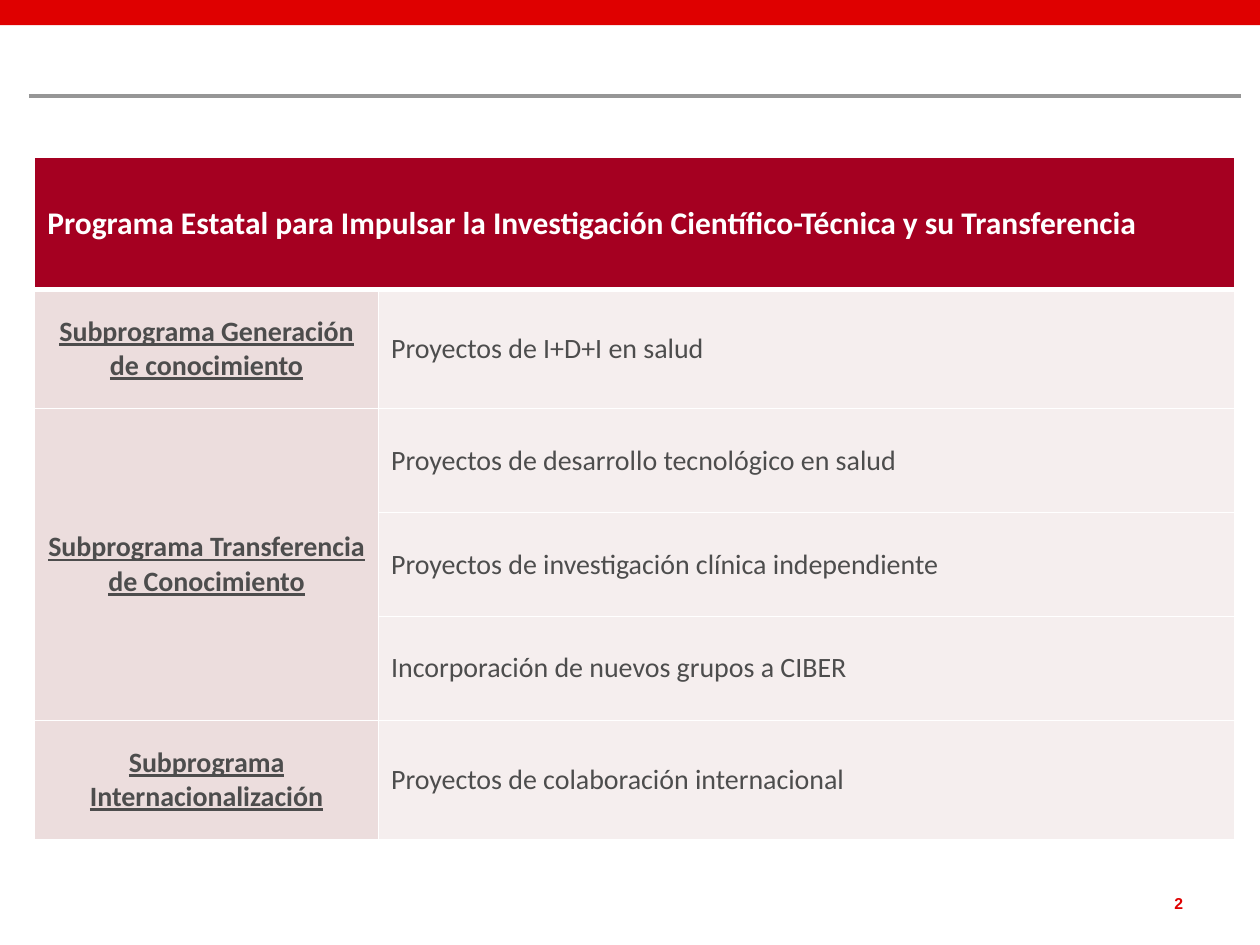
"""Build a slide with a table of research subprogrammes and their project lines."""
from lxml import etree
from pptx import Presentation
from pptx.dml.color import RGBColor
from pptx.enum.shapes import MSO_CONNECTOR, MSO_SHAPE
from pptx.enum.text import MSO_ANCHOR, PP_ALIGN
from pptx.oxml.ns import qn
from pptx.util import Pt

RECT = MSO_SHAPE.RECTANGLE
STRAIGHT = MSO_CONNECTOR.STRAIGHT
MIDDLE = MSO_ANCHOR.MIDDLE
LEFT, CENTER, RIGHT = PP_ALIGN.LEFT, PP_ALIGN.CENTER, PP_ALIGN.RIGHT

RED = RGBColor(0xDF, 0x00, 0x00)
GRAY = RGBColor(0x96, 0x96, 0x96)
WHITE = RGBColor(0xFF, 0xFF, 0xFF)
CRIMSON = RGBColor(0xA5, 0x00, 0x21)
ROSE = RGBColor(0xEC, 0xDD, 0xDD)
PALE = RGBColor(0xF5, 0xEE, 0xEE)
DARK = RGBColor(0x4D, 0x4D, 0x4D)

HEADING = "Programa Estatal para Impulsar la Investigación Científico-Técnica y su Transferencia"
ROWS = [
    ("Subprograma Generación de conocimiento", "Proyectos de I+D+I en salud"),
    ("Subprograma Transferencia de Conocimiento", "Proyectos de desarrollo tecnológico en salud"),
    ("", "Proyectos de investigación clínica independiente"),
    ("", "Incorporación de nuevos grupos a CIBER"),
    ("Subprograma Internacionalización", "Proyectos de colaboración internacional"),
]
COL_WIDTHS = [196.5, 489.5]
ROW_HEIGHTS = [75.5, 68, 59.4, 59.4, 59.4, 68]


def write(tf, text, size=16, font="Calibri", color=DARK, bold=False, underline=False, align=LEFT):
    p = tf.paragraphs[0]
    p.alignment = align
    r = p.add_run()
    r.text = text
    r.font.size = Pt(size)
    r.font.name = font
    r.font.color.rgb = color
    r.font.bold = bold
    r.font.underline = underline


def add_border(cell, side, width):
    ln = etree.SubElement(cell._tc.get_or_add_tcPr(), qn("a:ln" + side), w=str(Pt(width)))
    fill = etree.SubElement(ln, qn("a:solidFill"))
    etree.SubElement(fill, qn("a:srgbClr"), val=str(WHITE))


prs = Presentation()
prs.slide_width, prs.slide_height = Pt(720), Pt(540)
s = prs.slides.add_slide(prs.slide_layouts[6])

bar = s.shapes.add_shape(RECT, 0, 0, Pt(720), Pt(14.4))
bar.shadow.inherit = False
bar.fill.solid()
bar.fill.fore_color.rgb = RED
bar.line.fill.background()

rule = s.shapes.add_connector(STRAIGHT, Pt(16.5), Pt(54.7), Pt(709), Pt(54.7))
rule.line.color.rgb = GRAY
rule.line.width = Pt(2.25)
etree.SubElement(rule._element.spPr, qn("a:effectLst"))

number = s.shapes.add_textbox(Pt(608.4), Pt(510.5), Pt(67.7), Pt(10.8))
tf = number.text_frame
tf.word_wrap = True
tf.margin_left = tf.margin_top = tf.margin_right = tf.margin_bottom = 0
write(tf, "2", size=9, font="Arial", color=RED, bold=True, align=RIGHT)

table = s.shapes.add_table(len(ROW_HEIGHTS), len(COL_WIDTHS), Pt(19.8), Pt(90),
                           Pt(sum(COL_WIDTHS)), Pt(sum(ROW_HEIGHTS))).table
for column, width in zip(table.columns, COL_WIDTHS):
    column.width = Pt(width)
for row, height in zip(table.rows, ROW_HEIGHTS):
    row.height = Pt(height)

for i, row in enumerate(table.rows):
    for j, cell in enumerate(row.cells):
        add_border(cell, "L", 1)
        add_border(cell, "R", 1)
        add_border(cell, "T", 3 if i == 1 else 1)
        add_border(cell, "B", 3 if i == 0 else 1)
        cell.fill.solid()
        cell.fill.fore_color.rgb = CRIMSON if i == 0 else (ROSE, PALE)[j]
        cell.vertical_anchor = MIDDLE

table.cell(0, 0).merge(table.cell(0, 1))
table.cell(2, 0).merge(table.cell(4, 0))

write(table.cell(0, 0).text_frame, HEADING, size=18, color=WHITE, bold=True)
for i, (subprogram, project) in enumerate(ROWS, start=1):
    if subprogram:
        write(table.cell(i, 0).text_frame, subprogram, bold=True, underline=True, align=CENTER)
    write(table.cell(i, 1).text_frame, project)

prs.save("out.pptx")
